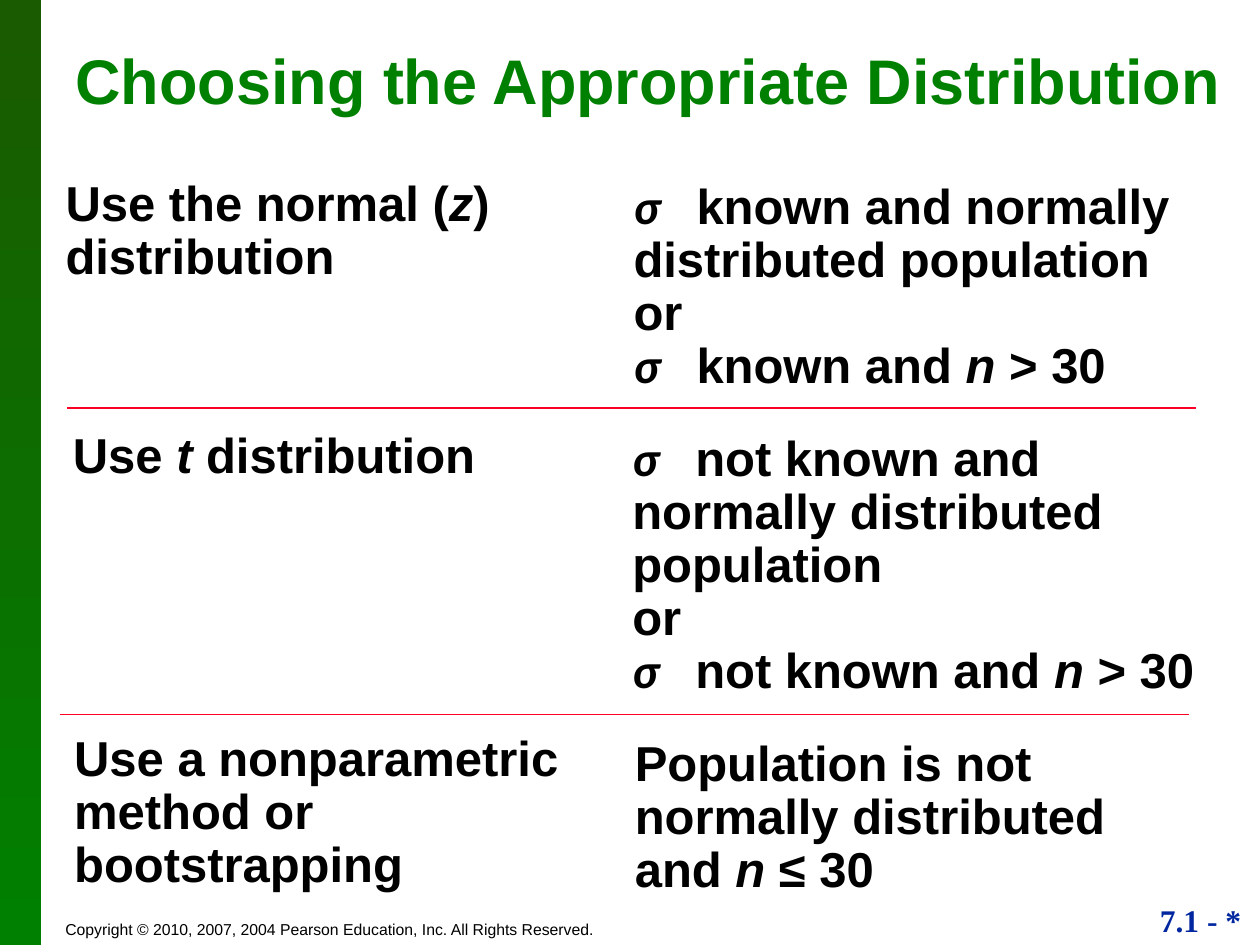
"""Build a slide on choosing the normal, t or nonparametric method."""
from dataclasses import dataclass

from lxml import etree
from pptx import Presentation
from pptx.dml.color import RGBColor
from pptx.enum.shapes import MSO_CONNECTOR, MSO_SHAPE
from pptx.enum.text import MSO_ANCHOR, MSO_AUTO_SIZE, PP_ALIGN
from pptx.oxml.ns import qn
from pptx.util import Inches, Pt

LEFT, CENTER, RIGHT = PP_ALIGN.LEFT, PP_ALIGN.CENTER, PP_ALIGN.RIGHT
TOP, MIDDLE, BOTTOM = MSO_ANCHOR.TOP, MSO_ANCHOR.MIDDLE, MSO_ANCHOR.BOTTOM


@dataclass(frozen=True)
class Theme:
    sans: str = "Arial"
    symbol: str = "Calibri"
    serif: str = "Times New Roman"
    ink: RGBColor = RGBColor(0, 0, 0)
    green: RGBColor = RGBColor(0, 0x80, 0)
    dark_green: RGBColor = RGBColor(0x1A, 0x5A, 0)
    blue: RGBColor = RGBColor(0, 0x27, 0x9F)
    red: RGBColor = RGBColor(0xFC, 0x01, 0x28)
    title_size: int = 36
    body_size: int = 28
    page_size: int = 18
    small_size: int = 9


theme = Theme()
prs = Presentation()
prs.slide_width, prs.slide_height = Inches(10), Inches(7.5)
COL, ROW = prs.slide_width / 100, prs.slide_height / 75
slide = prs.slides.add_slide(prs.slide_layouts[1])
shapes = slide.shapes


def place(holder, col, row, cols, rows, align=LEFT, anchor=TOP):
    """Position a text holder on the grid and return its first paragraph."""
    holder.left, holder.top = round(col * COL), round(row * ROW)
    holder.width, holder.height = round(cols * COL), round(rows * ROW)
    frame = holder.text_frame
    frame.word_wrap = True
    frame.auto_size = MSO_AUTO_SIZE.NONE
    frame.vertical_anchor = anchor
    paragraph = frame.paragraphs[0]
    paragraph.alignment = align
    paragraph.space_before = Pt(0)
    return paragraph


def write(paragraph, text, size, color=theme.ink, face=theme.sans, bold=True, italic=False):
    """Append one formatted run."""
    run = paragraph.add_run()
    run.text = text
    font = run.font
    font.name, font.size, font.bold, font.italic = face, Pt(size), bold, italic
    font.color.rgb = color


side_band = shapes.add_shape(MSO_SHAPE.RECTANGLE, 0, 0, round(3.3 * COL), round(75.2 * ROW))
side_band.shadow.inherit = False
side_band.line.fill.background()
side_band.fill.gradient()
side_band.fill.gradient_angle = 270
for stop, shade in zip(side_band.fill.gradient_stops, (theme.dark_green, theme.green)):
    stop.color.rgb = shade

page_label = place(shapes.add_textbox(0, 0, 0, 0), 86.2, 71, 13.3, 4, RIGHT)
write(page_label, "7.1 - *", theme.page_size, theme.blue, theme.serif)
copyright_line = place(shapes.add_textbox(0, 0, 0, 0), 4.2, 70, 69.2, 5, anchor=BOTTOM)
write(copyright_line, "Copyright © 2010, 2007, 2004 Pearson Education, Inc. All Rights Reserved.",
      theme.small_size, bold=False)
heading = place(shapes.title, 4.6, 2, 93.7, 8.6, CENTER, MIDDLE)
write(heading, "Choosing the Appropriate Distribution", theme.title_size, theme.green)

statements = [
    ((4.2, 13.7, 45.2, 23.4), ["Use the normal (", "z", ") distribution"]),
    ((49.3, 14, 47, 22.4), ["σ", "\tknown and normally distributed population", "\n", "or", "\n",
                            "σ", "\tknown and ", "n", " > 30"]),
    ((4.8, 33.7, 45.2, 23.1), ["Use ", "t", " distribution"]),
    ((49.2, 34, 47, 22.4), ["σ", "\tnot known and normally distributed population", "\n", "or", "\n",
                            "σ", "\tnot known and ", "n", " > 30"]),
    ((4.9, 57.8, 45.2, 14.1), ["Use a nonparametric method or bootstrapping"]),
    ((49.4, 58.2, 47, 13.7), ["Population is not normally distributed and ", "n", " ≤ 30"]),
]
for index, (area, pieces) in enumerate(statements):
    holder = shapes.add_textbox(0, 0, 0, 0) if index else slide.placeholders[1]
    statement = place(holder, *area)
    statement.line_spacing = 0.9
    statement.space_after = Pt(9.8)
    properties = statement._p.get_or_add_pPr()
    properties.set("marL", "0")
    properties.set("indent", "0")
    etree.SubElement(properties, qn("a:buNone"))
    if "σ" in pieces:
        tabs = etree.SubElement(properties, qn("a:tabLst"))
        etree.SubElement(tabs, qn("a:tab"), pos=str(Inches(0.43)), algn="l")
    for piece in pieces:
        if piece == "\n":
            statement.add_line_break()
        else:
            write(statement, piece, theme.body_size,
                  face=theme.symbol if piece == "σ" else theme.sans,
                  italic=piece in ("σ", "z", "t", "n"))

for start, row in ((5.3, 32.4), (4.8, 56.7)):
    divider = shapes.add_connector(MSO_CONNECTOR.STRAIGHT, round(start * COL), round(row * ROW),
                                   round((start + 89.6) * COL), round(row * ROW))
    divider.line.color.rgb = theme.red
    divider.line.width = Pt(1)
    etree.SubElement(divider._element.spPr, qn("a:effectLst"))

prs.save("out.pptx")
